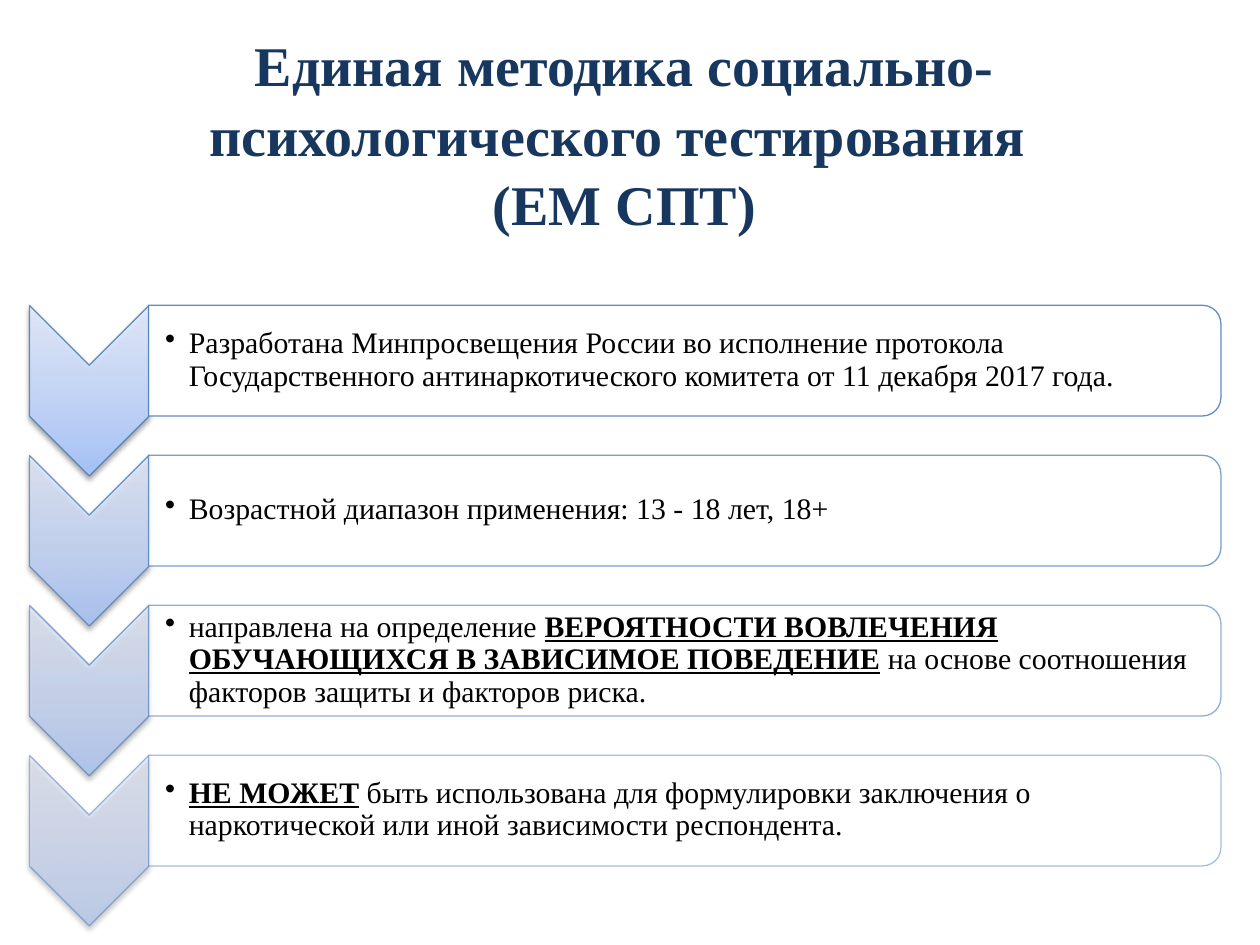
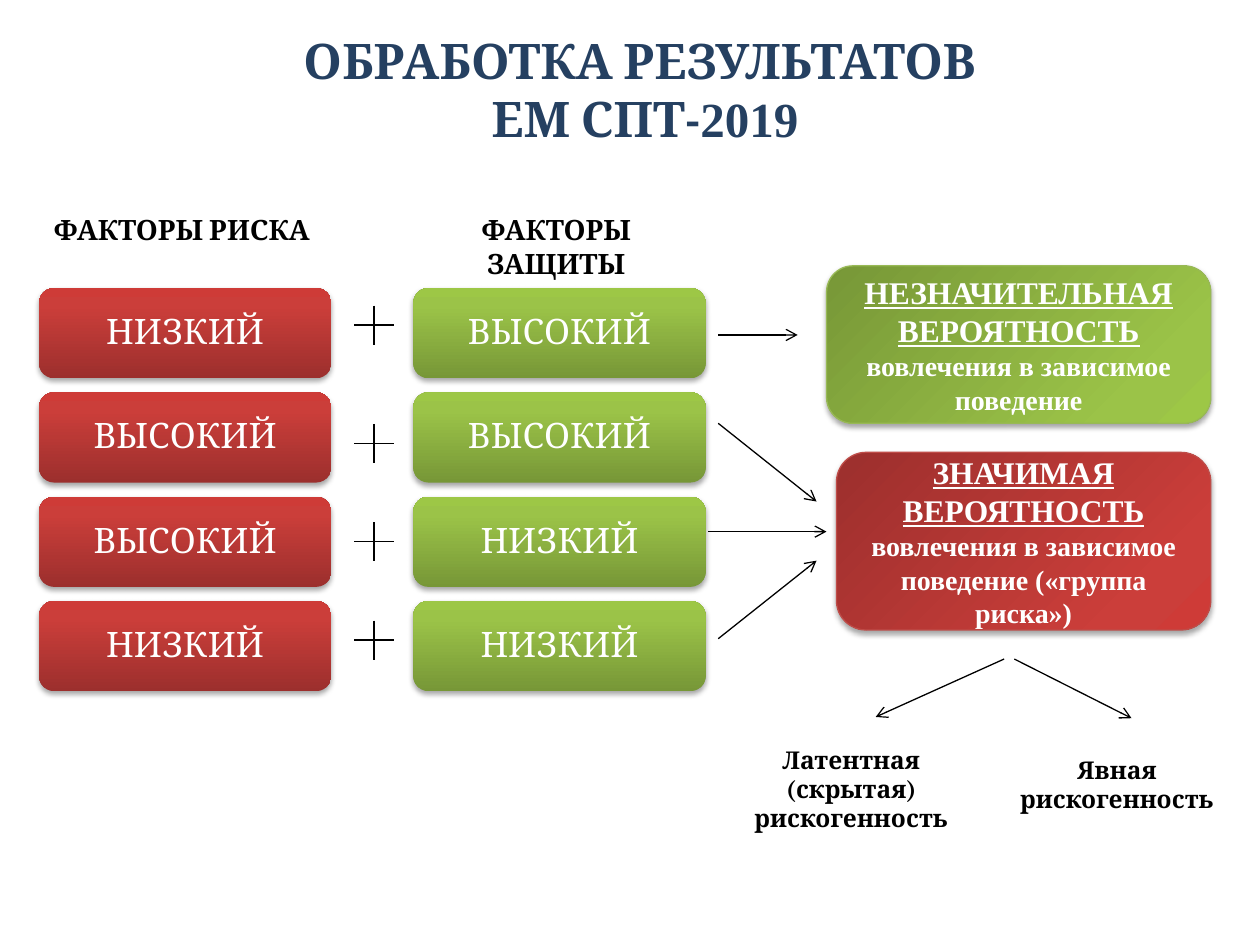
from lxml.etree import SubElement
from pptx import Presentation
from pptx.dml.color import RGBColor
from pptx.enum.shapes import MSO_CONNECTOR, MSO_SHAPE as Preset
from pptx.enum.text import MSO_ANCHOR as Anchor, PP_ALIGN as Align
from pptx.oxml.ns import qn
from pptx.util import Pt

SERIF = "Times New Roman"
CAMBRIA = "Cambria"
BLACK = "000000"
WHITE = "FFFFFF"
ACCENT_BLUE = "4F81BD"
BLUES = {0: "A4C4FF", 35: "BFD4FF", 100: "E6EEFF"}
REDS = {0: "9C2F2D", 80: "CB3E3A", 100: "CE3B37"}
GREENS = {0: "779737", 80: "9BC348", 100: "9DC746"}


def write(shape, runs, font=SERIF, size=16, color=BLACK, bold=False, align=Align.CENTER,
          anchor=Anchor.TOP, spacing=None, insets=(7.2, 3.6, 7.2, 3.6), bullet=False):
    frame = shape.text_frame
    frame.word_wrap = True
    frame.vertical_anchor = anchor
    frame.margin_left, frame.margin_top, frame.margin_right, frame.margin_bottom = map(Pt, insets)
    paragraph = frame.paragraphs[0]
    paragraph.alignment = align
    if spacing:
        paragraph.line_spacing = spacing
    if bullet:
        properties = paragraph._p.get_or_add_pPr()
        properties.set("marL", str(Pt(13.5)))
        properties.set("indent", str(-Pt(13.5)))
        SubElement(properties, qn("a:buChar"), char="•")
    for text, changes in runs:
        for number, line in enumerate(text.split("\n")):
            if number:
                paragraph.add_line_break()
            run = paragraph.add_run()
            run.text = line
            run.font.name = changes.get("font", font)
            run.font.size = Pt(changes.get("size", size))
            run.font.bold = changes.get("bold", bold)
            run.font.underline = changes.get("underline", False)
            run.font.color.rgb = RGBColor.from_string(color)


def paint(shape, stops, angle=270, outline=None, alpha=100, shadow=0):
    shape.fill.gradient()
    gradient = shape._element.spPr.find(qn("a:gradFill"))
    gradient.set("rotWithShape", "0")
    gradient.find(qn("a:lin")).set("ang", str(angle * 60000))
    stop_list = gradient.find(qn("a:gsLst"))
    for stop in list(stop_list):
        stop_list.remove(stop)
    for position, color in stops.items():
        stop = SubElement(stop_list, qn("a:gs"), pos=str(position * 1000))
        tint = SubElement(stop, qn("a:srgbClr"), val=color)
        SubElement(tint, qn("a:alpha"), val=str(alpha * 1000))
    if outline:
        shape.line.color.rgb = RGBColor.from_string(outline)
        shape.line.width = Pt(0.75)
        for tint in shape._element.spPr.findall(".//" + qn("a:ln") + "//" + qn("a:srgbClr")):
            SubElement(tint, qn("a:alpha"), val=str(alpha * 1000))
    else:
        shape.line.fill.background()
    shape.shadow.inherit = False
    if shadow:
        effects = shape._element.spPr.find(qn("a:effectLst"))
        outer = SubElement(effects, qn("a:outerShdw"), blurRad=str(Pt(3.1)), dist=str(Pt(1.8)),
                           dir="5400000", rotWithShape="0")
        tint = SubElement(outer, qn("a:srgbClr"), val=BLACK)
        SubElement(tint, qn("a:alpha"), val=str(shadow * 1000))


deck = Presentation()
deck.slide_width, deck.slide_height = Pt(720), Pt(540)
blank = deck.slide_layouts[6]

method = deck.slides.add_slide(blank).shapes
title = method.add_textbox(Pt(16.6), Pt(22.3), Pt(680.4), Pt(106.6))
write(title, [("Единая методика социально-психологического тестирования \n(ЕМ СПТ)", {})],
      size=32, color="17375E", bold=True, anchor=Anchor.MIDDLE, spacing=1.04)

stress = {"bold": True, "underline": True}
statements = [
    (90, [("Разработана Минпросвещения России во исполнение протокола "
           "Государственного антинаркотического комитета от 11 декабря 2017 года.", {})]),
    (77, [("Возрастной диапазон применения: 13 - 18 лет, 18+", {})]),
    (63, [("направлена на определение ", {}),
          ("ВЕРОЯТНОСТИ ВОВЛЕЧЕНИЯ ОБУЧАЮЩИХСЯ В ЗАВИСИМОЕ ПОВЕДЕНИЕ", stress),
          (" на основе соотношения факторов защиты и факторов риска.", {})]),
    (50, [("НЕ МОЖЕТ", stress),
          (" быть использована для формулировки заключения о наркотической "
           "или иной зависимости респондента.", {})]),
]
for row, (opacity, statement) in enumerate(statements):
    drop = row * 85.7
    step = method.add_shape(Preset.CHEVRON, Pt(2.3), Pt(189.2 + drop), Pt(97.4), Pt(68.2))
    step.rotation = 90
    paint(step, BLUES, outline=ACCENT_BLUE, alpha=opacity, shadow=38)
    panel = method.add_shape(Preset.ROUND_2_SAME_RECTANGLE,
                             Pt(359.6), Pt(-100.3 + drop), Pt(63.3), Pt(612.8))
    panel.rotation = 90
    paint(panel, {0: WHITE, 100: WHITE}, outline=ACCENT_BLUE, alpha=opacity)
    caption = method.add_textbox(Pt(85), Pt(177.4 + drop), Pt(609), Pt(57))
    write(caption, statement, size=17, align=Align.LEFT, anchor=Anchor.MIDDLE,
          spacing=0.9, insets=(9.4, 0.8, 0.8, 0.8), bullet=True)

results = deck.slides.add_slide(blank).shapes
title = results.add_textbox(Pt(44.6), Pt(16.6), Pt(648), Pt(68.4))
write(title, [("ОБРАБОТКА РЕЗУЛЬТАТОВ \nЕМ СПТ-", {}), ("2019", {"font": SERIF})],
      font=CAMBRIA, size=28, color="254061", bold=True, anchor=Anchor.MIDDLE)

outcomes = [
    ("НЕЗНАЧИТЕЛЬНАЯ ВЕРОЯТНОСТЬ ", "вовлечения в зависимое поведение",
     GREENS, "98B955", (472.3, 151.9, 219.6, 90)),
    ("ЗНАЧИМАЯ ВЕРОЯТНОСТЬ ", "вовлечения в зависимое поведение («группа риска»)",
     REDS, "BF4C48", (478, 258.5, 213.9, 101.5)),
]
for likelihood, detail, stops, outline, place in outcomes:
    outcome = results.add_shape(Preset.ROUNDED_RECTANGLE, *map(Pt, place))
    paint(outcome, stops, angle=45, outline=outline, shadow=35)
    write(outcome, [(likelihood, {"size": 18, "underline": True}), (detail, {})],
          color=WHITE, bold=True, anchor=Anchor.MIDDLE)

factors = [
    (22.3, REDS, ["НИЗКИЙ", "ВЫСОКИЙ", "ВЫСОКИЙ", "НИЗКИЙ"]),
    (236.2, GREENS, ["ВЫСОКИЙ", "ВЫСОКИЙ", "НИЗКИЙ", "НИЗКИЙ"]),
]
for left, stops, levels in factors:
    for row, level in enumerate(levels):
        box = results.add_shape(Preset.ROUNDED_RECTANGLE,
                                Pt(left), Pt(164.6 + row * 59.6), Pt(167), Pt(51.6))
        paint(box, stops, shadow=35)
        write(box, [(level, {})], font=CAMBRIA, size=20, color=WHITE,
              anchor=Anchor.MIDDLE, spacing=0.9)

labels = [
    ("ФАКТОРЫ РИСКА", 16, (22.3, 118.1, 163.4, 46)),
    ("ФАКТОРЫ ЗАЩИТЫ", 16, (236.2, 118.1, 163.4, 46)),
    ("Латентная (скрытая) рискогенность", 14, (416.2, 421.9, 140.4, 58.3)),
    ("Явная рискогенность", 14, (568.1, 427.7, 140.4, 41)),
]
for text, size, place in labels:
    label = results.add_textbox(*map(Pt, place))
    write(label, [(text, {})], font=CAMBRIA, size=size, bold=True)

arrows = [
    (410.4, 191.4, 455.8, 191.4),
    (410.4, 241.9, 466.6, 286.6),
    (404.6, 303.8, 472.3, 303.8),
    (410.4, 365, 466.6, 320.4),
    (573.8, 376.6, 500.4, 409.7),
    (579.6, 376.6, 646.6, 410.4),
]
pluses = []
for middle in (185.8, 253.4, 309.6, 365.8):
    pluses += [(202.5, middle, 224.9, middle), (213.7, middle - 11.2, 213.7, middle + 11.2)]
for ends in arrows + pluses:
    stroke = results.add_connector(MSO_CONNECTOR.STRAIGHT, *map(Pt, ends))
    stroke.line.color.rgb = RGBColor.from_string(BLACK)
    stroke.line.width = Pt(0.75)
    if ends in arrows:
        SubElement(stroke.line._get_or_add_ln(), qn("a:tailEnd"), type="arrow")
    SubElement(stroke._element.spPr, qn("a:effectLst"))

deck.save("out.pptx")
